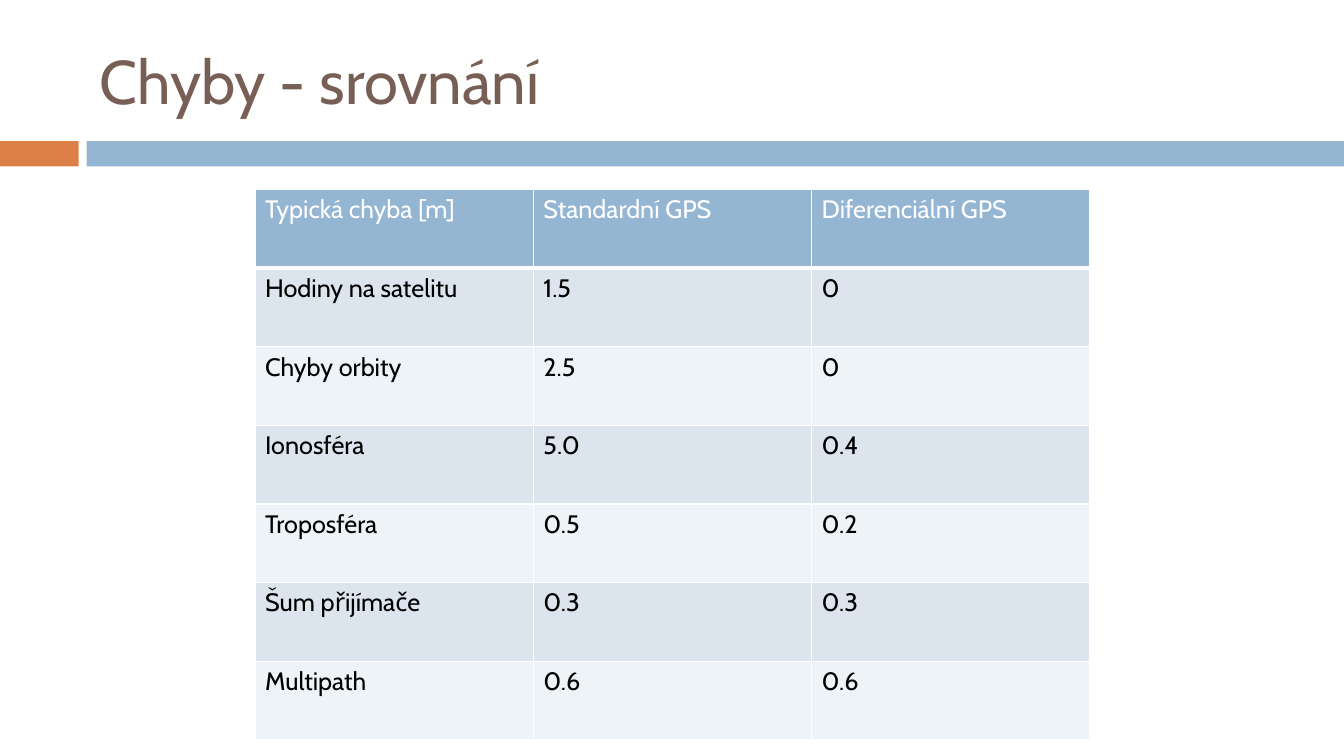
from dataclasses import dataclass

from lxml.etree import SubElement
from pptx import Presentation
from pptx.dml.color import RGBColor
from pptx.enum.shapes import MSO_SHAPE
from pptx.enum.text import MSO_ANCHOR
from pptx.oxml.ns import qn
from pptx.util import Inches, Pt

FONT = "Cabin"
WHITE = "FFFFFF"
BLUE = "94B6D2"
BANDS = ("DCE5EE", "EEF3F7")
COLUMN_WIDTH = 2.76
ROW_HEIGHT = 0.78


@dataclass
class Bar:
    left: float
    width: float
    color: str


BARS = [Bar(0, 0.78, "DD8047"), Bar(0.86, 12.47, BLUE)]

ERRORS = [
    ("Typická chyba [m]", "Standardní GPS", "Diferenciální GPS"),
    ("Hodiny na satelitu", "1.5", "0"),
    ("Chyby orbity", "2.5", "0"),
    ("Ionosféra", "5.0", "0.4"),
    ("Troposféra", "0.5", "0.2"),
    ("Šum přijímače", "0.3", "0.3"),
    ("Multipath", "0.6", "0.6"),
]


def rgb(color: str) -> RGBColor:
    return RGBColor.from_string(color)


def write(tf, text: str, size: float, color: str) -> None:
    tf.text = text
    font = tf.paragraphs[0].runs[0].font
    font.name = FONT
    font.size = Pt(size)
    font.bold = False
    font.color.rgb = rgb(color)


def add_bar(slide, bar: Bar) -> None:
    sp = slide.shapes.add_shape(
        MSO_SHAPE.RECTANGLE, Inches(bar.left), Inches(1.4), Inches(bar.width), Inches(0.25)
    )
    sp.shadow.inherit = False
    sp.fill.solid()
    sp.fill.fore_color.rgb = rgb(bar.color)
    sp.line.fill.background()


def add_title(slide, text: str) -> None:
    sp = slide.shapes.add_textbox(Inches(0.89), Inches(0.25), Inches(11.89), Inches(1.08))
    tf = sp.text_frame
    tf.word_wrap = True
    tf.vertical_anchor = MSO_ANCHOR.MIDDLE
    write(tf, text, 44, "775F55")


def set_borders(cell, bottom: float) -> None:
    tc_pr = cell._tc.get_or_add_tcPr()
    for side, width in (("L", 1), ("R", 1), ("T", 1), ("B", bottom)):
        ln = SubElement(tc_pr, qn(f"a:ln{side}"), w=str(Pt(width)))
        fill = SubElement(ln, qn("a:solidFill"))
        SubElement(fill, qn("a:srgbClr"), val=WHITE)


def add_error_table(slide, rows: list[tuple[str, ...]]) -> None:
    n_rows, n_cols = len(rows), len(rows[0])
    table = slide.shapes.add_table(
        n_rows, n_cols, Inches(2.53), Inches(1.88),
        Inches(n_cols * COLUMN_WIDTH), Inches(n_rows * ROW_HEIGHT),
    ).table
    for i, row in enumerate(rows):
        header = i == 0
        for j, text in enumerate(row):
            cell = table.cell(i, j)
            write(cell.text_frame, text, 18, WHITE if header else "000000")
            set_borders(cell, 3 if header else 1)
            cell.fill.solid()
            cell.fill.fore_color.rgb = rgb(BLUE if header else BANDS[(i - 1) % 2])


def main() -> None:
    prs = Presentation()
    prs.slide_width = Inches(13.33)
    prs.slide_height = Inches(7.5)
    s = prs.slides.add_slide(prs.slide_layouts[6])
    for bar in BARS:
        add_bar(s, bar)
    add_title(s, "Chyby - srovnání")
    add_error_table(s, ERRORS)
    prs.save("out.pptx")


if __name__ == "__main__":
    main()
